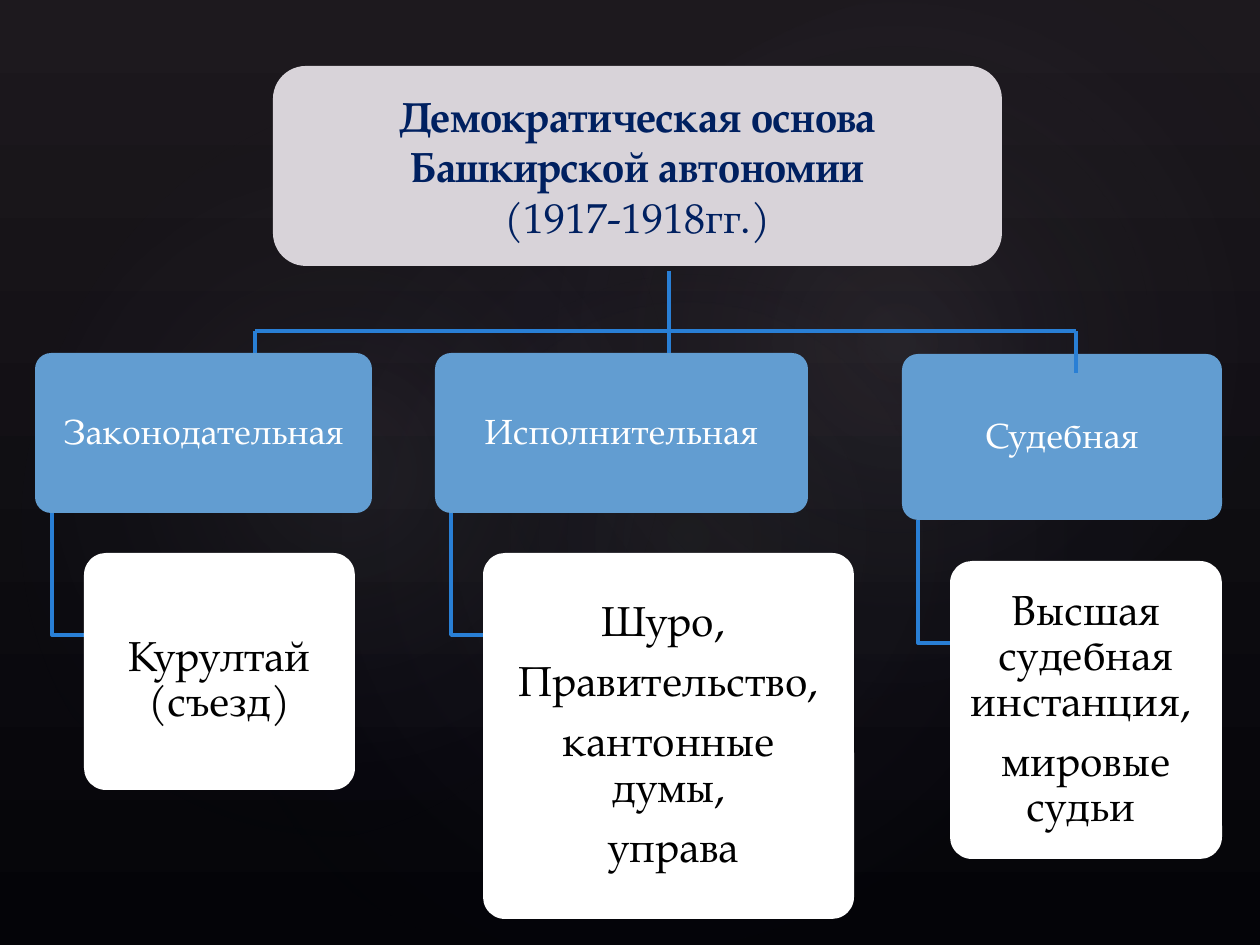
from collections import namedtuple
from dataclasses import dataclass

import lxml.etree
import pptx
import pptx.dml.color
import pptx.enum.shapes
import pptx.enum.text
import pptx.oxml
import pptx.oxml.ns
import pptx.util

PX = 914400 / 126
SHAPE = pptx.enum.shapes.MSO_SHAPE
Box = namedtuple("Box", "x y w h")


@dataclass(frozen=True)
class Theme:
    font: str = "TeX Gyre Pagella"
    bg_top: str = "1D191E"
    bg_bottom: str = "040408"
    glow: str = "C4BCC6"
    glow_edge: str = "242852"
    title_fill: str = "D8D3D9"
    title_text: str = "002060"
    branch_fill: str = "629DD1"
    branch_text: str = "FFFFFF"
    leaf_fill: str = "FFFFFF"
    leaf_text: str = "000000"
    line: str = "297FD5"
    line_pt: float = 2.25
    large_pt: int = 24
    small_pt: int = 20


THEME = Theme()


def px(n):
    return pptx.util.Emu(round(n * PX))


def rgb(value):
    return pptx.dml.color.RGBColor.from_string(value)


def add_background(s):
    fill = s.background.fill
    fill.gradient()
    fill.gradient_angle = 270
    for stop, color in zip(fill.gradient_stops, (THEME.bg_top, THEME.bg_bottom)):
        stop.color.rgb = rgb(color)


def add_glow(s, box, angle, alpha):
    """Soft ellipse that fades out from its centre; alpha in percent."""
    sp = s.shapes.add_shape(SHAPE.OVAL, *map(px, box))
    sp.rotation = angle
    sp.shadow.inherit = False
    sp.line.fill.background()
    gradient = pptx.oxml.parse_xml(
        f'<a:gradFill {pptx.oxml.ns.nsdecls("a")}><a:gsLst>'
        f'<a:gs pos="0"><a:srgbClr val="{THEME.glow}"><a:alpha val="{alpha * 1000}"/></a:srgbClr></a:gs>'
        f'<a:gs pos="58000"><a:srgbClr val="{THEME.glow_edge}"><a:alpha val="0"/></a:srgbClr></a:gs>'
        '</a:gsLst><a:path path="circle"><a:fillToRect l="50000" t="50000" r="50000" b="50000"/>'
        '</a:path></a:gradFill>')
    sp._element.spPr.find(pptx.oxml.ns.qn("a:prstGeom")).addnext(gradient)


def add_card(s, box, lines, fill, color, size, radius, spacing=0.9, after=0, inset=14, drop=0):
    """Rounded box with centred paragraphs, moved down by drop px."""
    sp = s.shapes.add_shape(SHAPE.ROUNDED_RECTANGLE, *map(px, box))
    sp.adjustments[0] = radius / min(box.w, box.h)
    sp.shadow.inherit = False
    sp.fill.solid()
    sp.fill.fore_color.rgb = rgb(fill)
    sp.line.fill.background()
    tf = sp.text_frame
    tf.word_wrap = True
    tf.vertical_anchor = pptx.enum.text.MSO_ANCHOR.MIDDLE
    tf.margin_left = tf.margin_right = tf.margin_bottom = px(inset)
    tf.margin_top = px(inset + 2 * drop)
    for i, line in enumerate(lines):
        p = tf.add_paragraph() if i else tf.paragraphs[0]
        p.text = line
        p.alignment = pptx.enum.text.PP_ALIGN.CENTER
        p.line_spacing = spacing
        p.space_after = pptx.util.Pt(after if i < len(lines) - 1 else 0)
        p.font.name = THEME.font
        p.font.size = pptx.util.Pt(size)
        p.font.color.rgb = rgb(color)
    return tf


def add_title(s, box):
    lines = ("Демократическая основа", "Башкирской автономии", "(1917-1918гг.)")
    tf = add_card(s, box, lines, THEME.title_fill, THEME.title_text,
                  THEME.large_pt, radius=33, spacing=1)
    for p in tf.paragraphs[:2]:
        p.font.bold = True
    # A hanging first line moves the centred heading to the left
    tf.paragraphs[0]._p.get_or_add_pPr().set("indent", str(-px(32)))


def style_line(sp):
    sp.line.color.rgb = rgb(THEME.line)
    sp.line.width = pptx.util.Pt(THEME.line_pt)


def add_elbow(s, x, top, bottom, right):
    builder = s.shapes.build_freeform(x, top, scale=PX)
    builder.add_line_segments([(x, bottom), (right, bottom)], close=False)
    sp = builder.convert_to_shape()
    sp.shadow.inherit = False
    sp.fill.background()
    style_line(sp)


def add_line(s, x1, y1, x2, y2):
    line = s.shapes.add_connector(pptx.enum.shapes.MSO_CONNECTOR.STRAIGHT,
                                  *map(px, (x1, y1, x2, y2)))
    style_line(line)
    lxml.etree.SubElement(line._element.spPr, pptx.oxml.ns.qn("a:effectLst"))


def add_branch(s, box, name, leaf, lines, drop=0):
    """Power branch with its body; leaf is placed relative to box."""
    x, y = box.x + leaf.x, box.y + leaf.y
    add_card(s, box, [name], THEME.branch_fill, THEME.branch_text, THEME.small_pt, radius=16)
    add_elbow(s, x - 32, box.y + box.h, y + 82, x)
    add_card(s, Box(x, y, leaf.w, leaf.h), lines, THEME.leaf_fill, THEME.leaf_text,
             THEME.large_pt, radius=22, after=8.4, drop=drop)


def add_tree_lines(s, box, trunk, right_end):
    """Trunk from the title, crossbar and three drops to the branches."""
    bar, right, bottom = box.y + 60, box.x + box.w, box.y + box.h
    add_line(s, trunk, box.y, trunk, bar)
    add_line(s, box.x, bar, right, bar)
    for x, end in ((box.x, bottom), (trunk, bottom), (right, right_end)):
        add_line(s, x, bar, x, end)


def main():
    prs = pptx.Presentation()
    prs.slide_width, prs.slide_height = px(1260), px(945)
    s = prs.slides.add_slide(prs.slide_layouts[6])
    add_background(s)
    add_glow(s, Box(189, 144, 998, 786), 328.7, 7)
    add_glow(s, Box(-38, 161, 764, 617), 294.3, 8)
    add_glow(s, Box(451, 16, 893, 655), 328.7, 8)

    add_title(s, Box(273, 66, 729, 200))
    add_branch(s, Box(35, 353, 337, 160), "Законодательная",
               Box(49, 200, 271, 237), ["Курултай (съезд)"], drop=9)
    add_branch(s, Box(435, 353, 373, 160), "Исполнительная", Box(48, 200, 371, 366),
               ["Шуро, ", "Правительство,", "кантонные думы,", " управа"])
    add_branch(s, Box(902, 354, 320, 166), "Судебная", Box(48, 207, 272, 298),
               ["Высшая судебная инстанция, ", "мировые судьи "])
    add_tree_lines(s, Box(255, 271, 821, 82), trunk=669, right_end=373)
    prs.save("out.pptx")


if __name__ == "__main__":
    main()
